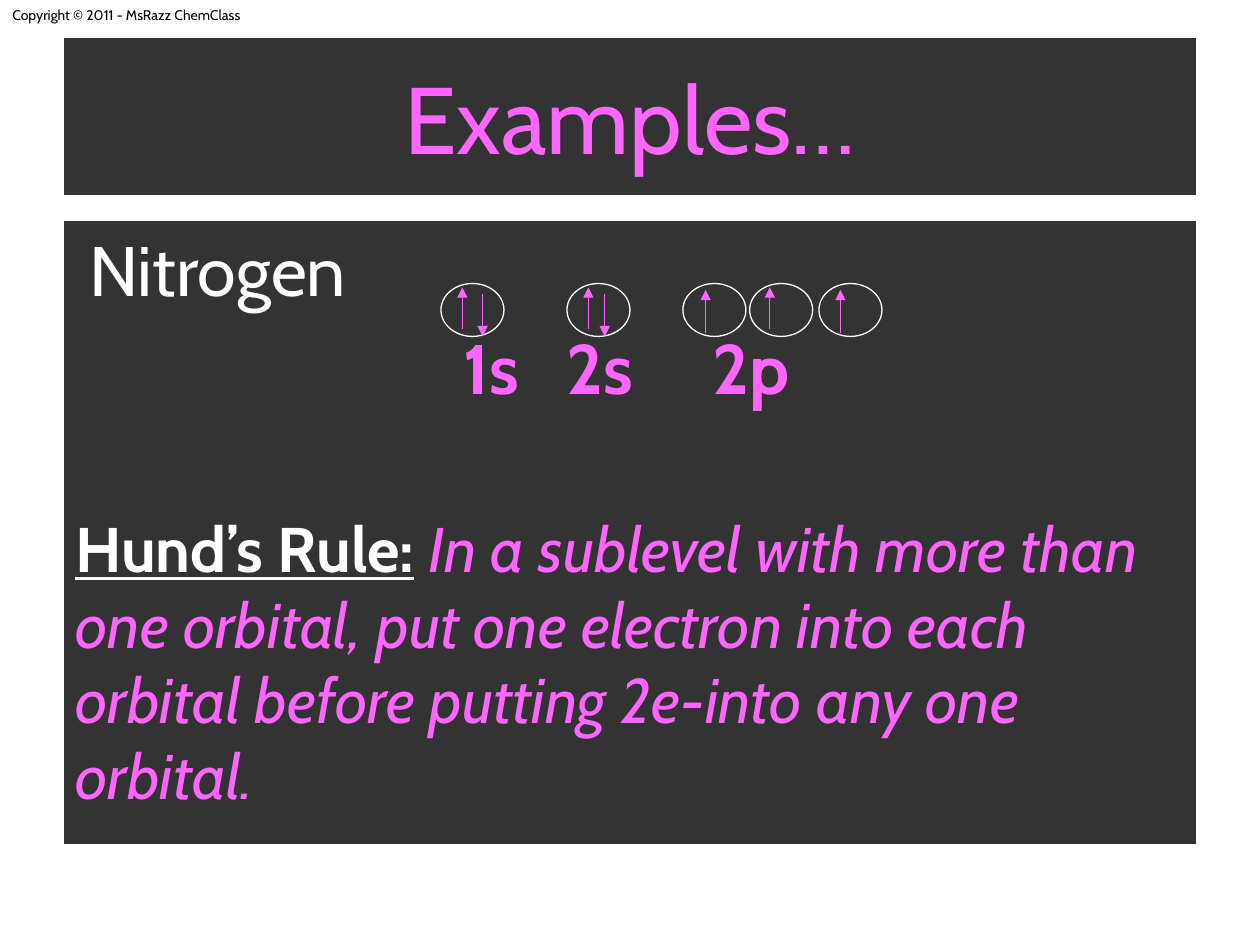
from pptx import Presentation
from pptx.dml.color import RGBColor
from pptx.enum.shapes import MSO_CONNECTOR, MSO_SHAPE
from pptx.enum.text import MSO_ANCHOR, PP_ALIGN
from pptx.oxml.ns import qn
from pptx.util import Inches, Pt
from lxml import etree

RECT, OVAL = MSO_SHAPE.RECTANGLE, MSO_SHAPE.OVAL
STRAIGHT = MSO_CONNECTOR.STRAIGHT
TOP, MIDDLE = MSO_ANCHOR.TOP, MSO_ANCHOR.MIDDLE
LEFT, CENTER = PP_ALIGN.LEFT, PP_ALIGN.CENTER

COLORS = {"black": "000000", "white": "FFFFFF", "pink": "FF66FF"}
FONT = "Cabin"

# Start and end heights of an arrow inside its orbital
UP, LOW, DOWN = (0.36, 0.03), (0.39, 0.05), (0.08, 0.42)
# Orbital offset from the row's left edge, then its electrons
ORBITALS = [
    (0, [(0.17, UP), (0.33, DOWN)]),
    (1, [(0.17, UP), (0.3, DOWN)]),
    (1.92, [(0.18, LOW)]),
    (2.45, [(0.16, UP)]),
    (3, [(0.17, LOW)]),
]
LABEL_TABS = [3.08, 3.9, 5.06]


def color(name):
    return RGBColor.from_string(COLORS[name])


def add_run(para, text, size, hue, **form):
    run = para.add_run()
    run.text = text
    run.font.color.rgb = color(hue)
    values = {"name": FONT, "size": Pt(size), **form}
    for key, value in values.items():
        setattr(run.font, key, value)


def set_line(shape, hue):
    shape.line.color.rgb = color(hue)
    shape.line.width = Pt(0.75)


def add_panel(slide, box, anchor):
    """Add a see-through black panel and return its text frame."""
    panel = slide.shapes.add_shape(RECT, *map(Inches, box))
    panel.shadow.inherit = False
    panel.fill.solid()
    panel.fill.fore_color.rgb = color("black")
    tint = panel.fill._xPr.find(qn("a:solidFill"))[0]
    etree.SubElement(tint, qn("a:alpha")).set("val", "80000")
    set_line(panel, "white")
    frame = panel.text_frame
    frame.word_wrap = True
    frame.vertical_anchor = anchor
    frame.paragraphs[0].alignment = LEFT
    return frame


def add_credit(slide, box):
    frame = slide.shapes.add_textbox(*map(Inches, box)).text_frame
    frame.word_wrap = True
    add_run(frame.paragraphs[0], "Copyright © 2011 - MsRazz ChemClass", 8, "black")


def add_title(slide, box):
    para = add_panel(slide, box, MIDDLE).paragraphs[0]
    para.alignment = CENTER
    add_run(para, "Examples…", 54, "pink")


def add_tabs(para, stops):
    tabs = etree.SubElement(para._p.get_or_add_pPr(), qn("a:tabLst"))
    for stop in stops:
        tab = etree.SubElement(tabs, qn("a:tab"))
        tab.set("pos", str(Inches(stop)))
        tab.set("algn", "l")


def add_body(slide, box):
    frame = add_panel(slide, box, TOP)
    name = frame.paragraphs[0]
    name._p.get_or_add_pPr().set("indent", str(Inches(0.11)))
    add_run(name, "Nitrogen", 40, "white")

    labels, rule = frame.add_paragraph(), frame.add_paragraph()
    for para, gap in ((labels, 8), (rule, 57.6)):
        para.alignment = LEFT
        para.space_before = Pt(gap)
    add_tabs(labels, LABEL_TABS)
    add_run(labels, "\t1s\t2s\t2p", 40, "pink", bold=True)
    add_run(rule, "Hund’s Rule:", 36, "white", bold=True, underline=True)
    add_run(rule, " ", 36, "white", bold=True)
    add_run(rule, "In a sublevel with more than one orbital, put one electron "
            "into each orbital before putting 2e-into any one orbital.",
            36, "pink", italic=True)

    add_row(slide, box[0] + 3, box[1] + 0.5)


def add_arrow(slide, x, start, end):
    arrow = slide.shapes.add_connector(
        STRAIGHT, *map(Inches, (x, start, x, end)))
    set_line(arrow, "pink")
    tail = etree.SubElement(arrow.line._get_or_add_ln(), qn("a:tailEnd"))
    tail.set("type", "triangle")
    etree.SubElement(arrow._element.spPr, qn("a:effectLst"))


def add_row(slide, left, top):
    """Draw the orbitals with their electrons."""
    for shift, spins in ORBITALS:
        x = left + shift
        oval = slide.shapes.add_shape(OVAL, *map(Inches, (x, top, 0.5, 0.42)))
        oval.shadow.inherit = False
        oval.fill.background()
        set_line(oval, "white")
        for dx, (start, end) in spins:
            add_arrow(slide, x + dx, top + start, top + end)


def main():
    deck = Presentation()
    deck.slide_width, deck.slide_height = Inches(10), Inches(7.5)
    slide = deck.slides.add_slide(deck.slide_layouts[6])
    add_credit(slide, (0, 0, 2.37, 0.24))
    add_title(slide, (0.5, 0.3, 9, 1.25))
    add_body(slide, (0.5, 1.75, 9, 4.95))
    deck.save("out.pptx")


if __name__ == "__main__":
    main()
